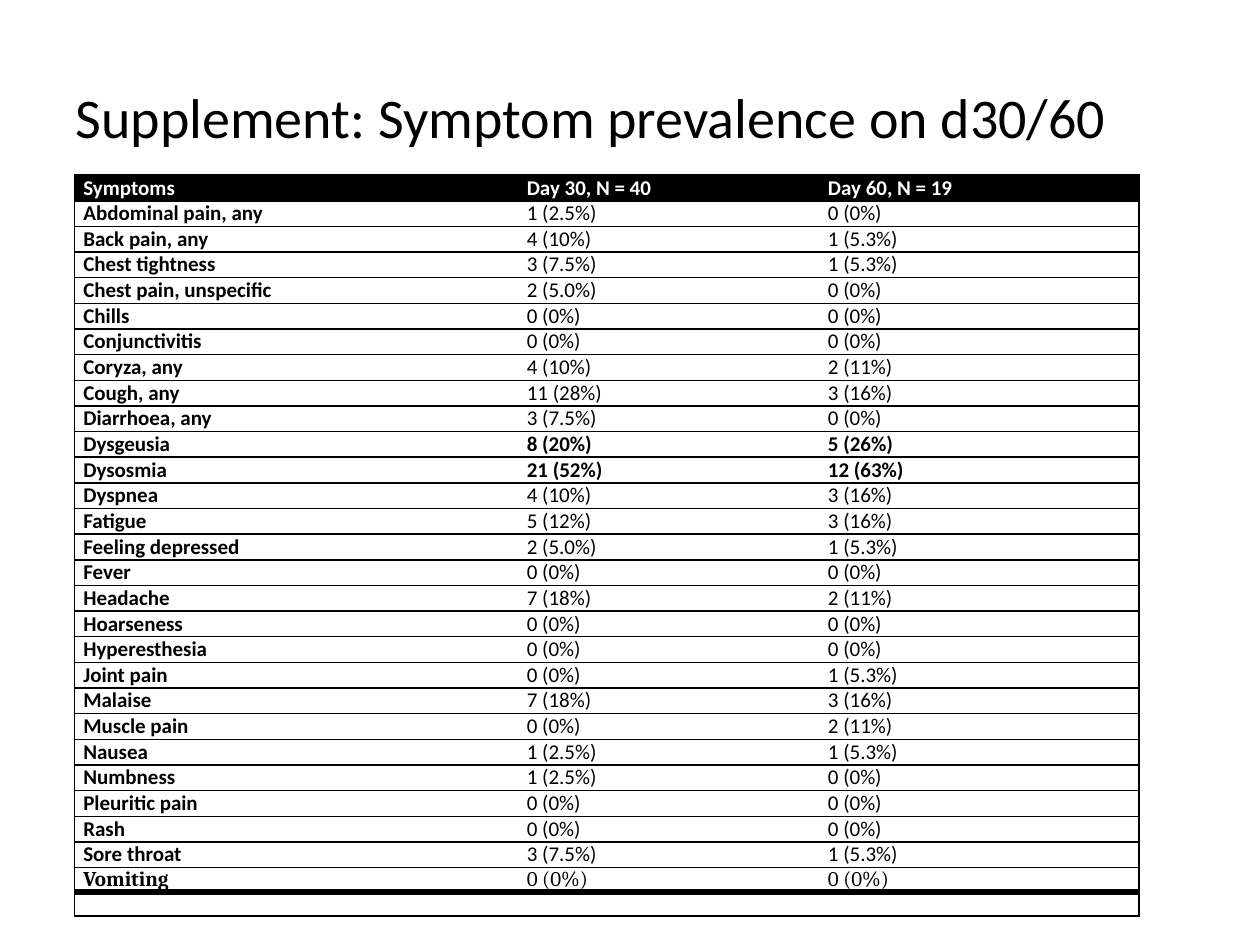
"""Build the supplement slide with the symptom prevalence table for days 30 and 60."""
from lxml import etree
from pptx import Presentation
from pptx import util as u
from pptx.dml.color import RGBColor
from pptx.enum import text
from pptx.oxml import ns

COLOURS = {"ink": "000000", "paper": "FFFFFF"}
HEADER = ("Symptoms", "Day 30, N = 40", "Day 60, N = 19")
PREVALENCE = [
    ("Abdominal pain, any", "1 (2.5%)", "0 (0%)"),
    ("Back pain, any", "4 (10%)", "1 (5.3%)"),
    ("Chest tightness", "3 (7.5%)", "1 (5.3%)"),
    ("Chest pain, unspecific", "2 (5.0%)", "0 (0%)"),
    ("Chills", "0 (0%)", "0 (0%)"),
    ("Conjunctivitis", "0 (0%)", "0 (0%)"),
    ("Coryza, any", "4 (10%)", "2 (11%)"),
    ("Cough, any", "11 (28%)", "3 (16%)"),
    ("Diarrhoea, any", "3 (7.5%)", "0 (0%)"),
    ("Dysgeusia", "8 (20%)", "5 (26%)"),
    ("Dysosmia", "21 (52%)", "12 (63%)"),
    ("Dyspnea", "4 (10%)", "3 (16%)"),
    ("Fatigue", "5 (12%)", "3 (16%)"),
    ("Feeling depressed", "2 (5.0%)", "1 (5.3%)"),
    ("Fever", "0 (0%)", "0 (0%)"),
    ("Headache", "7 (18%)", "2 (11%)"),
    ("Hoarseness", "0 (0%)", "0 (0%)"),
    ("Hyperesthesia", "0 (0%)", "0 (0%)"),
    ("Joint pain", "0 (0%)", "1 (5.3%)"),
    ("Malaise", "7 (18%)", "3 (16%)"),
    ("Muscle pain", "0 (0%)", "2 (11%)"),
    ("Nausea", "1 (2.5%)", "1 (5.3%)"),
    ("Numbness", "1 (2.5%)", "0 (0%)"),
    ("Pleuritic pain", "0 (0%)", "0 (0%)"),
    ("Rash", "0 (0%)", "0 (0%)"),
    ("Sore throat", "3 (7.5%)", "1 (5.3%)"),
    ("Vomiting", "0 (0%)", "0 (0%)"),
]
HIGHLIGHTED = {"Dysgeusia", "Dysosmia"}
CLOSING = ("", "", "")


def add_run(paragraph, wording, font, size, colour, bold=False):
    run = paragraph.add_run()
    run.text = wording
    run.font.name, run.font.size, run.font.bold = font, u.Pt(size), bold
    run.font.color.rgb = RGBColor.from_string(COLOURS[colour])


def add_border(cell, side, points):
    line = etree.SubElement(cell._tc.get_or_add_tcPr(), ns.qn(f"a:ln{side}"), w=str(u.Pt(points)))
    if points:
        fill = etree.SubElement(line, ns.qn("a:solidFill"))
        etree.SubElement(fill, ns.qn("a:srgbClr"), val=COLOURS["ink"])
    else:
        etree.SubElement(line, ns.qn("a:noFill"))


prs = Presentation()
prs.slide_width, prs.slide_height = u.Cm(25.4), u.Cm(19.05)
slide = prs.slides.add_slide(prs.slide_layouts[5])

heading = slide.shapes.title
heading.left, heading.top, heading.width, heading.height = u.Cm(1.27), u.Cm(0.76), u.Cm(22.86), u.Cm(3.18)
heading.text_frame.vertical_anchor = text.MSO_ANCHOR.MIDDLE
heading_line = heading.text_frame.paragraphs[0]
heading_line.alignment = text.PP_ALIGN.LEFT
add_run(heading_line, "Supplement: Symptom prevalence on d30/60", "Calibri", 32, "ink")

records = [HEADER, *PREVALENCE, CLOSING]
frame = slide.shapes.add_table(len(records), len(HEADER), u.Cm(1.5), u.Cm(3.53), u.Cm(21.46), u.Cm(14.73))
symptoms = frame.table
symptoms.first_row = symptoms.horz_banding = False
for column, width in zip(symptoms.columns, (8.94, 6.07, 6.45)):
    column.width = u.Cm(width)
for row in symptoms.rows:
    row.height = u.Cm(0.36)
frame.height = u.Cm(14.73)

for row_index, record in enumerate(records):
    is_header, is_closing = record is HEADER, record is CLOSING
    font = "Cambria" if is_closing or record[0] == "Vomiting" else "Calibri"
    for column_index, wording in enumerate(record):
        cell = symptoms.cell(row_index, column_index)
        cell.margin_left = cell.margin_right = u.Cm(0.18)
        cell.margin_top = cell.margin_bottom = 0
        add_border(cell, "L", 1 if column_index == 0 else 0)
        add_border(cell, "R", 1 if column_index == len(HEADER) - 1 else 0)
        add_border(cell, "T", 4 if is_closing else 1)
        add_border(cell, "B", 1)
        cell.fill.solid()
        cell.fill.fore_color.rgb = RGBColor.from_string(COLOURS["ink" if is_header else "paper"])
        paragraph = cell.text_frame.paragraphs[0]
        if is_closing:
            ending = etree.SubElement(paragraph._p, ns.qn("a:endParaRPr"), sz="1200")
            etree.SubElement(ending, ns.qn("a:latin"), typeface=font)
            continue
        cell.vertical_anchor = text.MSO_ANCHOR.BOTTOM if is_header else text.MSO_ANCHOR.TOP
        paragraph.space_before = paragraph.space_after = u.Pt(1.8)
        bold = is_header or column_index == 0 or record[0] in HIGHLIGHTED
        add_run(paragraph, wording, font, 12, "paper" if is_header else "ink", bold)

prs.save("out.pptx")
